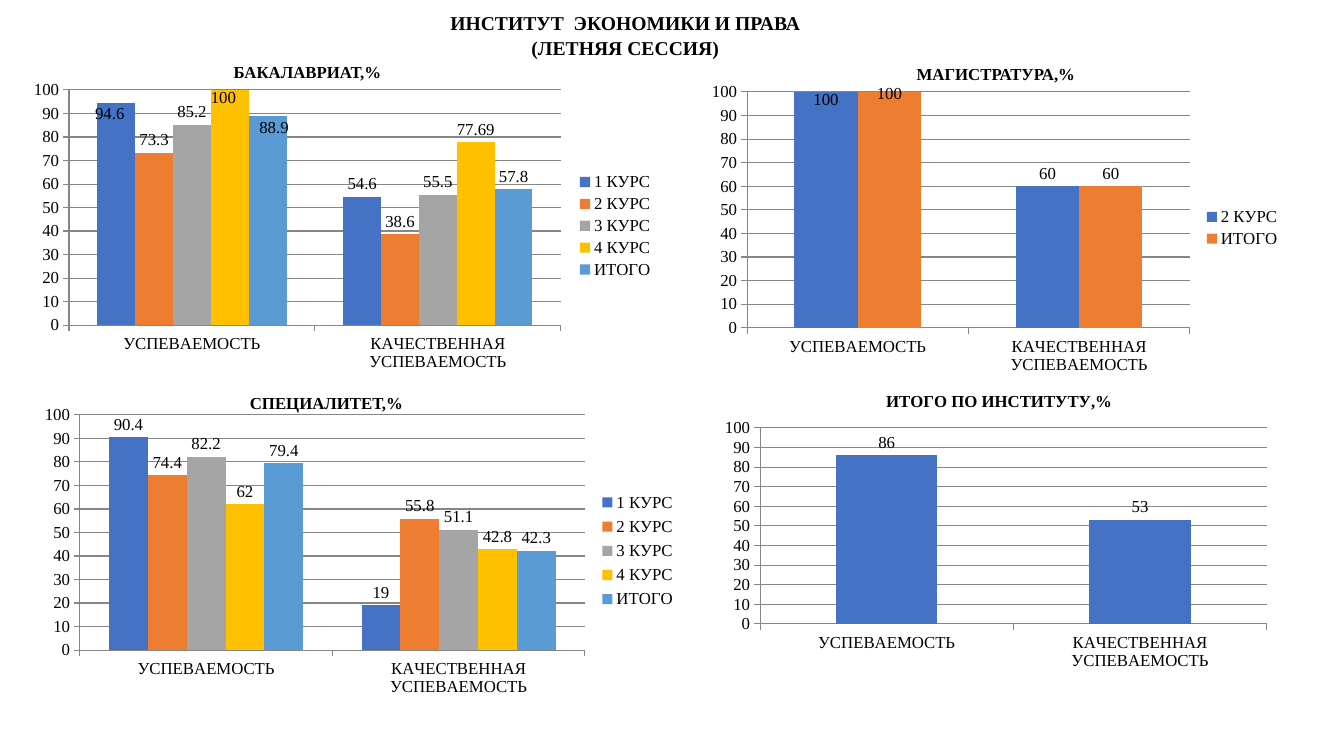
from dataclasses import dataclass

from lxml import etree
from pptx import Presentation
from pptx.chart import data as cd
from pptx.dml.color import RGBColor
from pptx.enum import chart as ce, text as te
from pptx.util import Pt

FONT = "Times New Roman"
BLACK = "000000"
GRID = "868686"
COLORS = ["4472C4", "ED7D31", "A5A5A5", "FFC000", "5B9BD5"]
CATEGORIES = ["УСПЕВАЕМОСТЬ", "КАЧЕСТВЕННАЯ УСПЕВАЕМОСТЬ"]
COURSES = ["1 КУРС", "2 КУРС", "3 КУРС", "4 КУРС", "ИТОГО"]
C_NS = "http://schemas.openxmlformats.org/drawingml/2006/chart"

Box = tuple[float, float, float, float]


@dataclass
class Heading:
    text: str
    box: Box


@dataclass
class Panel:
    box: Box
    plot: Box
    series: dict[str, tuple[float, float]]
    label_shifts: dict[str, tuple[float, float]]
    legend: Box | None = None
    has_legend: bool = True
    title: str = ""


HEADINGS = [
    Heading("БАКАЛАВРИАТ,%", (117.4, 39.6, 204.5, 18.7)),
    Heading("МАГИСТРАТУРА,%", (609.1, 41, 204.5, 18.7)),
    Heading("СПЕЦИАЛИТЕТ,%", (131, 275.8, 204.5, 18.7)),
]

PANELS = [
    Panel(
        (15.1, 53.3, 459.4, 216),
        (49.3, 64.3, 351.4, 168),
        dict(zip(COURSES, [(94.6, 54.6), (73.3, 38.6), (85.2, 55.5), (100, 77.69), (88.9, 57.8)])),
        {"1 КУРС": (-0.01, 0.08), "4 КУРС": (-0.01, 0.07), "ИТОГО": (0.01, 0.08)},
    ),
    Panel(
        (22.3, 285.1, 468.7, 216),
        (57.1, 296.4, 360.7, 168),
        dict(zip(COURSES, [(90.4, 19), (74.4, 55.8), (82.2, 51.1), (62, 42.8), (79.4, 42.3)])),
        {},
        legend=(425, 348, 61, 91),
    ),
    Panel(
        (500.4, 54.7, 421.9, 216),
        (533.6, 65.7, 316.4, 168.5),
        {"2 КУРС": (100, 60), "ИТОГО": (100, 60)},
        {"2 КУРС": (0, 0.07), "ИТОГО": (0, 0.05)},
    ),
    Panel(
        (509.8, 266.4, 403.2, 216),
        (542.9, 305.7, 362, 140),
        {"Series 1": (86, 53)},
        {},
        has_legend=False,
        title="ИТОГО ПО ИНСТИТУТУ,%",
    ),
]


def rgb(color: str) -> RGBColor:
    return RGBColor.from_string(color)


def apply(target, values: dict) -> None:
    for name, value in values.items():
        setattr(target, name, value)


def style_font(font, size: float, bold: bool) -> None:
    apply(font, {"name": FONT, "size": Pt(size), "bold": bold})
    font.color.rgb = rgb(BLACK)


def layout(values: dict[str, object]):
    root = etree.Element(f"{{{C_NS}}}layout", nsmap={"c": C_NS})
    manual = etree.SubElement(root, f"{{{C_NS}}}manualLayout")
    for name, value in values.items():
        etree.SubElement(manual, f"{{{C_NS}}}{name}").set("val", str(value))
    return root


def inner_layout(box: Box, frame: Box, inner: bool = False):
    x, y, w, h = box
    left, top, width, height = frame
    values = {"layoutTarget": "inner"} if inner else {}
    values |= {"xMode": "edge", "yMode": "edge"}
    values |= {
        "x": (x - left) / width,
        "y": (y - top) / height,
        "w": w / width,
        "h": h / height,
    }
    return layout(values)


def place_layout(parent, element, after: str = "") -> None:
    for old in parent.findall(f"{{{C_NS}}}layout"):
        parent.remove(old)
    anchor = parent.find(f"{{{C_NS}}}{after}") if after else None
    if anchor is None:
        parent.insert(0, element)
    else:
        anchor.addnext(element)


def write_text(sp, lines: list[str], size: float) -> None:
    tf = sp.text_frame
    tf.text = "\n".join(lines)
    apply(tf, {
        "word_wrap": True,
        "auto_size": te.MSO_AUTO_SIZE.NONE,
        "vertical_anchor": te.MSO_ANCHOR.TOP,
    })
    for p in tf.paragraphs:
        apply(p, {
            "alignment": te.PP_ALIGN.CENTER,
            "line_spacing": 1.07,
            "space_before": Pt(0),
        })
        for r in p.runs:
            style_font(r.font, size, True)


def style_axes(chart) -> None:
    values = chart.value_axis
    apply(values, {"minimum_scale": 0, "maximum_scale": 100, "major_unit": 10,
                   "has_major_gridlines": True})
    for axis in (chart.category_axis, values):
        apply(axis, {"major_tick_mark": ce.XL_TICK_MARK.OUTSIDE,
                     "minor_tick_mark": ce.XL_TICK_MARK.NONE})
        style_font(axis.tick_labels.font, 12, False)
    for line in (chart.category_axis.format.line, values.format.line,
                 values.major_gridlines.format.line):
        line.color.rgb = rgb(GRID)
        line.width = Pt(0.75)


def style_series(chart, panel: Panel) -> None:
    plot = chart.plots[0]
    apply(plot, {"gap_width": 150, "vary_by_categories": False})
    for series, color in zip(plot.series, COLORS):
        series.format.fill.solid()
        series.format.fill.fore_color.rgb = rgb(color)
        labels = series.data_labels
        apply(labels, {"show_value": True, "position": ce.XL_LABEL_POSITION.OUTSIDE_END})
        style_font(labels.font, 12, False)
        if series.name in panel.label_shifts:
            dx, dy = panel.label_shifts[series.name]
            label = series.points[0].data_label
            label.position = ce.XL_LABEL_POSITION.OUTSIDE_END
            style_font(label.font, 12, False)
            dlbl = series._element.xpath("c:dLbls/c:dLbl")[0]
            place_layout(dlbl, layout({"x": dx, "y": dy}), "idx")


def add_panel(s, panel: Panel) -> None:
    data = cd.CategoryChartData()
    data.categories = CATEGORIES
    for name, values in panel.series.items():
        data.add_series(name, values)
    chart = s.shapes.add_chart(
        ce.XL_CHART_TYPE.COLUMN_CLUSTERED, *map(Pt, panel.box), data).chart
    style_font(chart.font, 12, False)
    style_axes(chart)
    style_series(chart, panel)
    chart.has_title = bool(panel.title)
    if panel.title:
        tf = chart.chart_title.text_frame
        tf.text = panel.title
        style_font(tf.paragraphs[0].runs[0].font, 12, True)
        spot = layout({"xMode": "edge", "yMode": "edge", "x": 0.3, "y": 0.05})
        place_layout(chart.chart_title._element, spot, "tx")
    chart.has_legend = panel.has_legend
    if panel.has_legend:
        apply(chart.legend, {"position": ce.XL_LEGEND_POSITION.RIGHT,
                             "include_in_layout": False})
        style_font(chart.legend.font, 12, False)
        if panel.legend:
            place_layout(chart.legend._element,
                         inner_layout(panel.legend, panel.box), "legendPos")
    area = chart._chartSpace.xpath("c:chart/c:plotArea")[0]
    place_layout(area, inner_layout(panel.plot, panel.box, True))


def main() -> None:
    prs = Presentation()
    apply(prs, {"slide_width": Pt(960), "slide_height": Pt(540)})
    s = prs.slides.add_slide(prs.slide_layouts[5])
    title = s.shapes.title
    apply(title, dict(zip(("left", "top", "width", "height"),
                          map(Pt, (181.4, 2.9, 530.6, 37.4)))))
    write_text(title, ["ИНСТИТУТ  ЭКОНОМИКИ И ПРАВА", "(ЛЕТНЯЯ СЕССИЯ)"], 14)
    for heading in HEADINGS:
        write_text(s.shapes.add_textbox(*map(Pt, heading.box)), [heading.text], 12)
    for panel in PANELS:
        add_panel(s, panel)
    prs.save("out.pptx")


if __name__ == "__main__":
    main()
